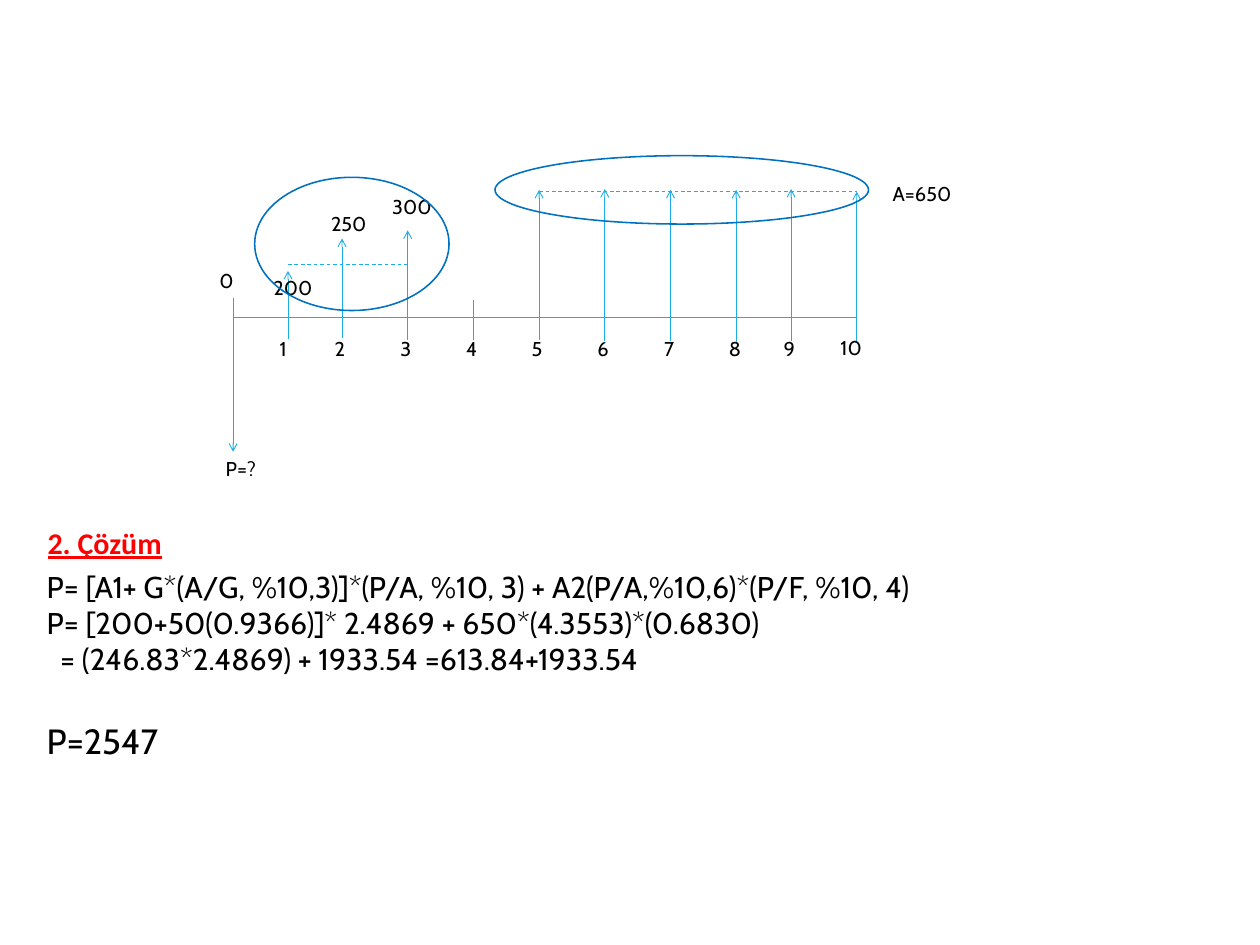
from dataclasses import dataclass

import pptx
import pptx.dml.color
import pptx.enum.dml
import pptx.enum.shapes
import pptx.oxml
import pptx.oxml.ns
import pptx.util

Inches = pptx.util.Inches
Pt = pptx.util.Pt
RGB = pptx.dml.color.RGBColor


@dataclass(frozen=True)
class Theme:
    line: RGB = RGB(0x1C, 0xAD, 0xE4)
    ring: RGB = RGB(0x00, 0x70, 0xC0)
    text: RGB = RGB(0, 0, 0)
    head: RGB = RGB(0xFF, 0, 0)
    body_font: str = "Cabin"
    head_font: str = "Calibri"
    label: int = 16
    body: int = 24
    answer: int = 28
    thin: float = 0.75
    thick: float = 1.25


@dataclass(frozen=True)
class Year:
    name: str
    x: float
    tick: float               # top of the tick
    flow: tuple | None        # start and tip of the cash flow arrow
    label: tuple              # left, top and width of the label


@dataclass(frozen=True)
class Label:
    text: str
    left: float
    top: float
    width: float


@dataclass(frozen=True)
class Step:
    text: str
    size: int
    before: int = 0
    indent: float = 0


THEME = Theme()
AXIS = 3.53
TICK = 0.45
ROW = 3.69

YEARS = [
    Year("0", 2.59, 3.31, (AXIS, 5.02), (2.34, 2.94, 0.36)),
    Year("1", 3.2, 3.32, (AXIS, 3.01), (3.01, ROW, 0.36)),
    Year("2", 3.8, 3.31, (AXIS, 2.65), (3.62, ROW, 0.36)),
    Year("3", 4.53, 3.33, (AXIS, 2.56), (4.35, ROW, 0.36)),
    Year("4", 5.26, 3.33, None, (5.08, ROW, 0.36)),
    Year("5", 5.99, 3.33, (3.55, 2.11), (5.81, ROW, 0.36)),
    Year("6", 6.72, 3.34, (AXIS, 2.1), (6.54, ROW, 0.36)),
    Year("7", 7.45, 3.34, (3.55, 2.11), (7.28, ROW, 0.36)),
    Year("8", 8.18, 3.36, (3.55, 2.11), (8, ROW, 0.36)),
    Year("9", 8.79, 3.34, (AXIS, 2.1), (8.61, ROW, 0.36)),
    Year("10", 9.52, 3.36, (3.56, 2.13), (9.24, 3.68, 0.61)),
]
LABELS = [
    Label("200", 2.94, 3.01, 0.73),
    Label("250", 3.58, 2.3, 0.73),
    Label("300", 4.26, 2.11, 0.73),
    Label("A=650", 9.82, 1.97, 1.09),
    Label("P=?", 2.41, 5.02, 0.97),
]
RINGS = [(2.83, 1.97, 2.16, 1.48), (5.5, 1.73, 4.15, 0.76)]
STEPS = [
    Step("P= [A1+ G*(A/G, %10,3)]*(P/A, %10, 3) + A2(P/A,%10,6)*(P/F, %10, 4)", THEME.body),
    Step("P= [200+50(0.9366)]* 2.4869 + 650*(4.3553)*(0.6830)", THEME.body),
    Step("= (246.83*2.4869) + 1933.54 =613.84+1933.54", THEME.body, indent=0.15),
    Step("P=2547", THEME.answer, before=34),
]


def add_line(slide, start: tuple, end: tuple, arrow: bool = False, dash: bool = False) -> None:
    line = slide.shapes.add_connector(
        pptx.enum.shapes.MSO_CONNECTOR.STRAIGHT, *map(Inches, start + end))
    line.line.color.rgb = THEME.line
    line.line.width = Pt(THEME.thin)
    if dash:
        line.line.dash_style = pptx.enum.dml.MSO_LINE.DASH
    props = line.element.spPr
    if arrow:
        tail = pptx.oxml.ns.qn("a:tailEnd")
        props.find(pptx.oxml.ns.qn("a:ln")).makeelement(tail)
        tip = pptx.oxml.parse_xml(
            f'<a:tailEnd {pptx.oxml.ns.nsdecls("a")} type="arrow"/>')
        props.find(pptx.oxml.ns.qn("a:ln")).append(tip)
    props.append(pptx.oxml.parse_xml(f'<a:effectLst {pptx.oxml.ns.nsdecls("a")}/>'))


def add_text(slide, box: tuple, steps: list[Step], font: str = THEME.body_font,
             color: RGB = THEME.text, strong: bool = False) -> None:
    frame = slide.shapes.add_textbox(*map(Inches, box)).text_frame
    frame.word_wrap = True
    for i, step in enumerate(steps):
        par = frame.add_paragraph() if i else frame.paragraphs[0]
        par.text = step.text
        par.font.name = font
        par.font.size = Pt(step.size)
        par.font.color.rgb = color
        if strong:
            par.font.bold = par.font.underline = True
        if step.before:
            par.space_before = Pt(step.before)
        if step.indent:
            par._p.get_or_add_pPr().set("marL", str(Inches(step.indent)))


def add_label(slide, label: Label) -> None:
    box = (label.left, label.top, label.width, 0.37)
    add_text(slide, box, [Step(label.text, THEME.label)])


def add_ring(slide, box: tuple) -> None:
    ring = slide.shapes.add_shape(pptx.enum.shapes.MSO_SHAPE.OVAL, *map(Inches, box))
    ring.shadow.inherit = False
    ring.fill.background()
    ring.line.color.rgb = THEME.ring
    ring.line.width = Pt(THEME.thick)


def main() -> None:
    deck = pptx.Presentation()
    deck.slide_width, deck.slide_height = Inches(14), Inches(10.5)
    slide = deck.slides.add_slide(deck.slide_layouts[6])

    # Worked solution
    add_text(slide, (0.42, 6.27, 14, 3.67), STEPS)
    add_text(slide, (0.43, 5.78, 12.22, 0.5), [Step("2. Çözüm", THEME.body)],
             THEME.head_font, THEME.head, strong=True)

    # Time axis with ticks and cash flows
    add_line(slide, (YEARS[0].x, AXIS), (YEARS[-1].x, AXIS))
    for year in YEARS:
        add_line(slide, (year.x, year.tick), (year.x, year.tick + TICK))
        if year.flow:
            start, tip = year.flow
            add_line(slide, (year.x, start), (year.x, tip), arrow=True)
        add_label(slide, Label(year.name, *year.label))

    # Level lines of the two series
    for first, last, level in [(5, 10, 2.13), (1, 3, 2.94)]:
        add_line(slide, (YEARS[first].x, level), (YEARS[last].x, level), dash=True)

    # Amounts and the rings around each series
    for label in LABELS:
        add_label(slide, label)
    for box in RINGS:
        add_ring(slide, box)

    deck.save("out.pptx")


if __name__ == "__main__":
    main()
